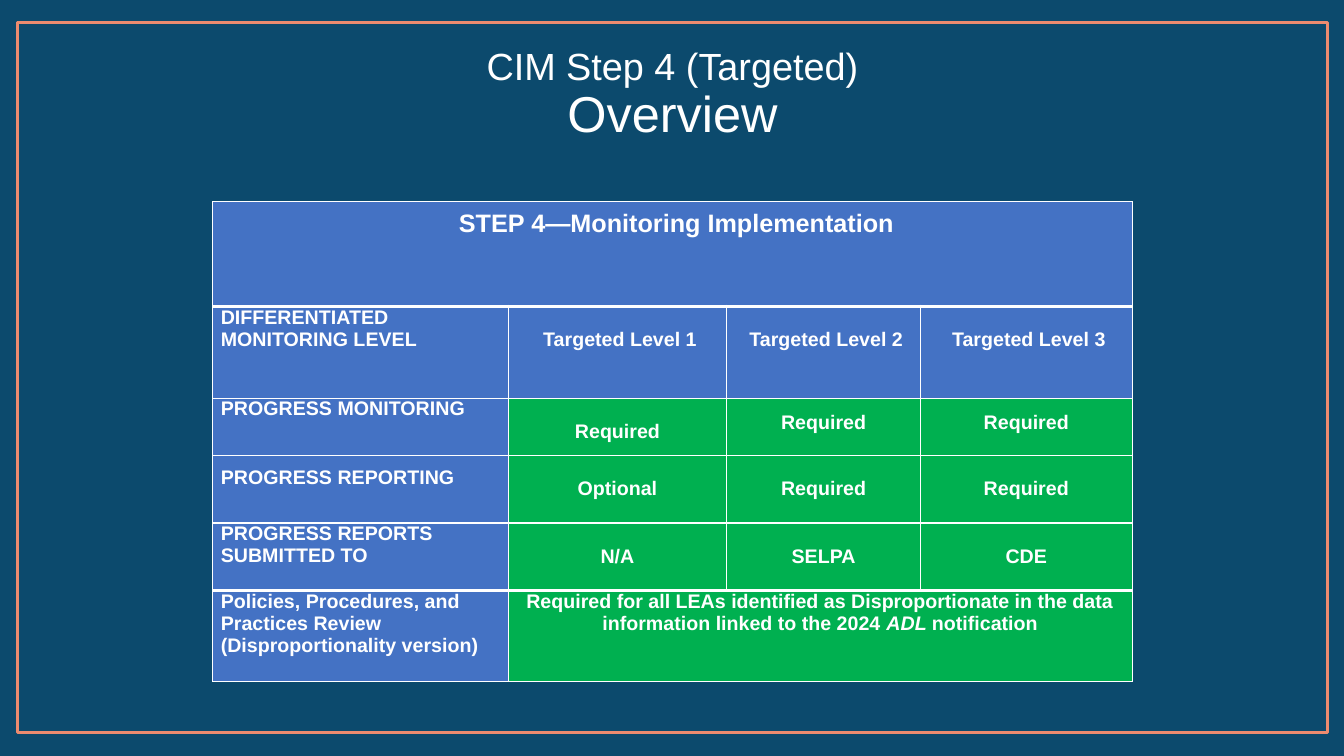
from dataclasses import dataclass

from lxml import etree
from pptx import Presentation
from pptx.dml.color import RGBColor
from pptx.enum.shapes import MSO_SHAPE as Shape
from pptx.enum.text import MSO_ANCHOR as Anchor, PP_ALIGN as Align
from pptx.oxml.ns import qn
from pptx.util import Inches, Pt


@dataclass(frozen=True)
class Theme:
    font: str = "Arial"
    background: str = "0C4A6D"
    frame: str = "ED8B6F"
    text: str = "FFFFFF"
    label: str = "4472C4"
    answer: str = "00B050"
    title_small: int = 27
    title_large: int = 36
    heading: int = 18
    body: int = 14
    thin: int = 1
    thick: int = 3


THEME = Theme()
FRAME = (0.17, 0.22, 13, 7.05)
TITLE_HEIGHT = 1.45
TABLE_AT = (2.11, 2)
COLUMNS = (2.93, 2.17, 1.92, 2.1)
ROW_HEIGHTS = (1.04, 0.91, 0.57, 0.67, 0.67, 0.9)
HEADING = "STEP 4—Monitoring Implementation"
# Each row: label, its top margin, answers, their top margins
LEVELS = ("DIFFERENTIATED MONITORING LEVEL", 0,
          ("Targeted Level 1", "Targeted Level 2", "Targeted Level 3"), (0.22,) * 3)
ANSWERS = (
    ("PROGRESS MONITORING", 0, ("Required",) * 3, (0.22, 0.13, 0.13)),
    ("PROGRESS REPORTING", 0.11, ("Optional", "Required", "Required"), (0.22,) * 3),
    ("PROGRESS REPORTS SUBMITTED TO", 0, ("N/A", "SELPA", "CDE"), (0.22,) * 3),
)
REVIEW = "Policies, Procedures, and Practices Review (Disproportionality version)"
# Text and whether it is italic
REVIEW_NOTE = (
    ("Required for all LEAs identified as Disproportionate in the data "
     "information linked to the 2024 ", False),
    ("ADL ", True),
    ("notification", False),
)


def rgb(color):
    return RGBColor.from_string(color)


def set_font(font, size=None, bold=None):
    font.name = THEME.font
    font.color.rgb = rgb(THEME.text)
    font.bold = bold
    if size:
        font.size = Pt(size)


def add_frame(s):
    frame = s.shapes.add_shape(Shape.RECTANGLE, *map(Inches, FRAME))
    frame.shadow.inherit = False
    frame.fill.background()
    frame.line.color.rgb = rgb(THEME.frame)
    frame.line.width = Pt(2)


def add_title(s, small, large):
    left, top, width, _ = FRAME
    box = s.shapes.add_textbox(*map(Inches, (left, top, width, TITLE_HEIGHT)))
    tf = box.text_frame
    tf.word_wrap = True
    tf.vertical_anchor = Anchor.MIDDLE
    p = tf.paragraphs[0]
    p.alignment = Align.CENTER
    p.line_spacing = 0.9
    set_font(p.font)
    r = p.add_run()
    r.text = small
    r.font.size = Pt(THEME.title_small)
    p.add_line_break()
    r = p.add_run()
    r.text = large
    r.font.size = Pt(THEME.title_large)


def set_borders(cell, top, bottom):
    tc_pr = cell._tc.get_or_add_tcPr()
    widths = (("L", THEME.thin), ("R", THEME.thin), ("T", top), ("B", bottom))
    for i, (side, width) in enumerate(widths):
        line = etree.Element(qn(f"a:ln{side}"), w=str(Pt(width)))
        fill = etree.SubElement(line, qn("a:solidFill"))
        etree.SubElement(fill, qn("a:srgbClr"), val=THEME.text)
        tc_pr.insert(i, line)


def fill_cell(cell, runs, color, top=0, left=0, align=Align.CENTER, size=THEME.body):
    cell.fill.solid()
    cell.fill.fore_color.rgb = rgb(color)
    cell.margin_left, cell.margin_top = Inches(left), Inches(top)
    cell.margin_right = cell.margin_bottom = 0
    p = cell.text_frame.paragraphs[0]
    p.alignment = align
    set_font(p.font, size, bold=True)
    for text, italic in runs:
        r = p.add_run()
        r.text = text
        if italic:
            r.font.italic = True


def fill_label(cell, text, top=0):
    fill_cell(cell, [(text, False)], THEME.label, top, left=0.08, align=Align.LEFT)


def fill_row(table, row, content, color, left=0):
    label, label_top, texts, tops = content
    fill_label(table.cell(row, 0), label, label_top)
    for col, (text, top) in enumerate(zip(texts, tops), 1):
        fill_cell(table.cell(row, col), [(text, False)], color, top, left)


def add_monitoring_table(s):
    size = sum(COLUMNS), sum(ROW_HEIGHTS)
    table = s.shapes.add_table(len(ROW_HEIGHTS), len(COLUMNS),
                               *map(Inches, TABLE_AT + size)).table
    for column, width in zip(table.columns, COLUMNS):
        column.width = Inches(width)
    for row, height in zip(table.rows, ROW_HEIGHTS):
        row.height = Inches(height)

    # Thick rules below the heading and above the review row
    last = len(ROW_HEIGHTS) - 1
    for i, row in enumerate(table.rows):
        for cell in row.cells:
            set_borders(cell,
                        THEME.thick if i in (1, last) else THEME.thin,
                        THEME.thick if i in (0, last - 1) else THEME.thin)

    # Heading and levels
    table.cell(0, 0).merge(table.cell(0, 3))
    fill_cell(table.cell(0, 0), [(HEADING, False)], THEME.label,
              top=0.08, left=0.08, size=THEME.heading)
    fill_row(table, 1, LEVELS, THEME.label, left=0.05)

    # Requirements by level
    for i, content in enumerate(ANSWERS, 2):
        fill_row(table, i, content, THEME.answer)

    # Review row
    table.cell(last, 1).merge(table.cell(last, 3))
    fill_label(table.cell(last, 0), REVIEW)
    fill_cell(table.cell(last, 1), REVIEW_NOTE, THEME.answer)


def main():
    prs = Presentation()
    prs.slide_width, prs.slide_height = Inches(13.33), Inches(7.5)
    s = prs.slides.add_slide(prs.slide_layouts[6])
    s.background.fill.solid()
    s.background.fill.fore_color.rgb = rgb(THEME.background)
    add_frame(s)
    add_title(s, "CIM Step 4 (Targeted)", "Overview")
    add_monitoring_table(s)
    prs.save("out.pptx")


if __name__ == "__main__":
    main()
